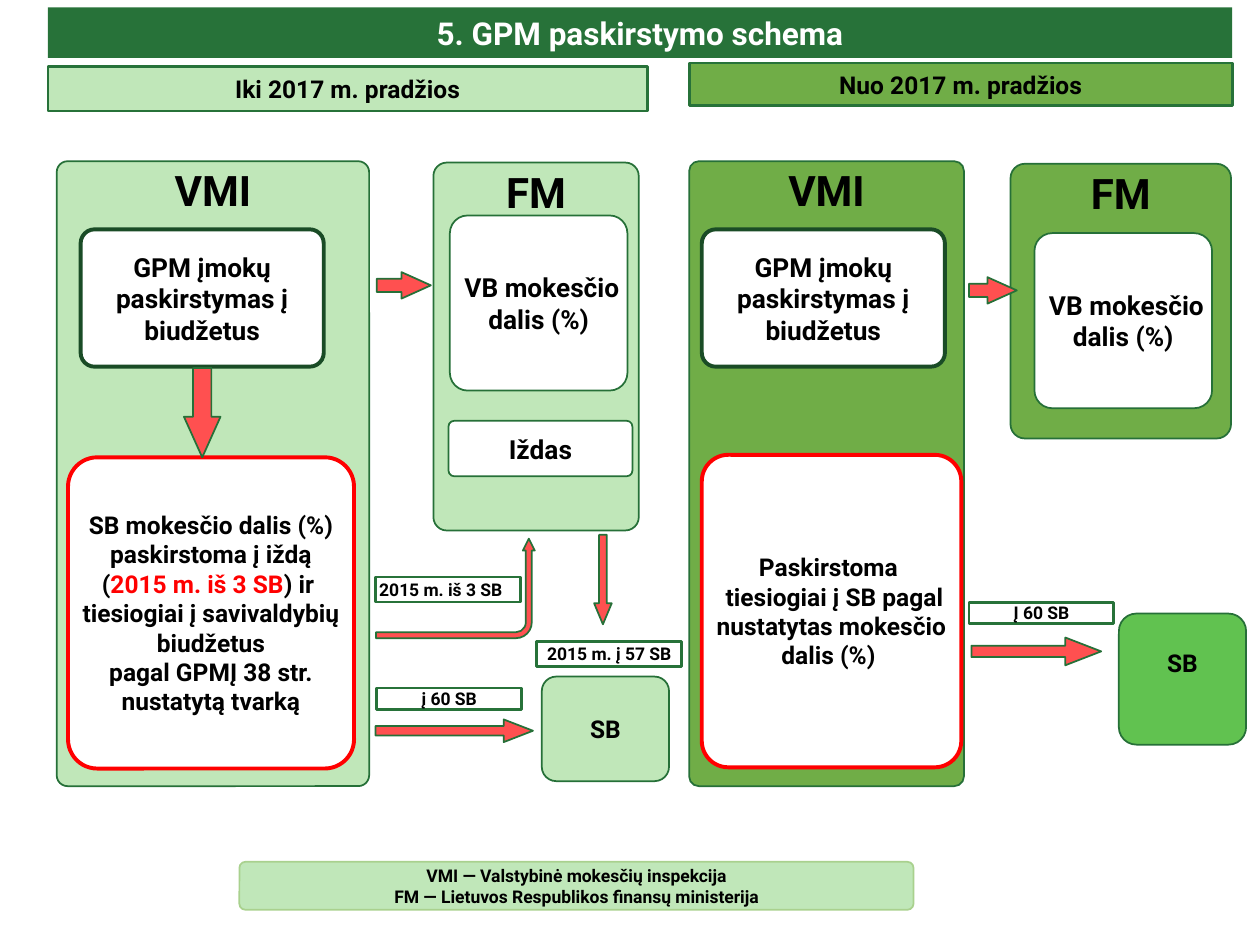
from pptx import Presentation
from pptx.dml.color import RGBColor
from pptx.enum.shapes import MSO_SHAPE as Form
from pptx.enum.text import MSO_ANCHOR as Anchor, PP_ALIGN as Align
from pptx.util import Inches, Pt

FONT = "Roboto"
BLACK = RGBColor(0, 0, 0)
WHITE = RGBColor(255, 255, 255)
RED = RGBColor(0xFF, 0, 0)
CORAL = RGBColor(0xFF, 0x50, 0x50)
MINT = RGBColor(0xC0, 0xE7, 0xB9)
LEAF = RGBColor(0x70, 0xAD, 0x47)
LIME = RGBColor(0x61, 0xC2, 0x50)
SAGE = RGBColor(0xA9, 0xD1, 0x8E)
EDGE = RGBColor(0x26, 0x70, 0x38)
PINE = RGBColor(0x27, 0x72, 0x39)
DARK = RGBColor(0x1A, 0x4C, 0x26)


def draw(slide, form, box, fill, line=EDGE, width=1, adj=()):
    """Draw a flat preset shape in a box given in inches."""
    shape = slide.shapes.add_shape(form, *[Inches(n) for n in box])
    shape.shadow.inherit = False
    shape.fill.solid()
    shape.fill.fore_color.rgb = fill
    if line is None:
        shape.line.fill.background()
    else:
        shape.line.color.rgb = line
        shape.line.width = Pt(width)
    for i, value in enumerate(adj):
        shape.adjustments[i] = value
    return shape


def write(shape, paras, size, color=BLACK, anchor=Anchor.MIDDLE,
          align=Align.CENTER, left=0, top=0):
    """Write paragraphs of (text, colour) runs or plain strings."""
    frame = shape.text_frame
    frame.word_wrap = True
    frame.vertical_anchor = anchor
    frame.margin_left, frame.margin_top = Inches(left), Inches(top)
    frame.margin_right = frame.margin_bottom = 0
    for i, runs in enumerate(paras):
        para = frame.add_paragraph() if i else frame.paragraphs[0]
        para.alignment = align
        for text, tint in [(runs, color)] if isinstance(runs, str) else runs:
            run = para.add_run()
            run.text = text
            font = run.font
            font.name, font.size, font.bold = FONT, Pt(size), True
            font.color.rgb = tint


def shift(x, y, box):
    """Move a relative box to its region's origin."""
    return (x + box[0], y + box[1], *box[2:])


def bar(slide, box, text, fill):
    """Draw a column heading."""
    write(draw(slide, Form.RECTANGLE, box, fill, PINE, 1.5), [text], 14)


def pane(slide, box, text, fill, adj):
    """Draw an institution panel with its name on top."""
    shape = draw(slide, Form.ROUNDED_RECTANGLE, box, fill, adj=[adj])
    write(shape, [text], 24, anchor=Anchor.TOP)


def card(slide, box, paras, size=15, line=EDGE, width=1):
    """Draw a white rounded card with centred text."""
    shape = draw(slide, Form.ROUNDED_RECTANGLE, box, WHITE, line, width, [0.102])
    write(shape, paras, size)


def note(slide, box, text, **style):
    """Draw a small flow label."""
    write(draw(slide, Form.RECTANGLE, box, WHITE, PINE, 1.5), [text], 10, **style)


def arrow(slide, box, adj=(0.5, 1.11), turn=0):
    """Draw a block arrow, turned when asked."""
    draw(slide, Form.RIGHT_ARROW, box, CORAL, adj=adj).rotation = turn


def bend(slide, box):
    """Draw the arrow that runs right and then up."""
    shape = draw(slide, Form.BENT_ARROW, box, CORAL, adj=(0.06, 0.06, 0.12, 0.16))
    shape.rotation = 90
    shape._element.spPr.xfrm.set("flipH", "1")


def town(slide, box, fill, **style):
    """Draw a municipal budget box."""
    shape = draw(slide, Form.ROUNDED_RECTANGLE, box, fill, adj=[0.138])
    write(shape, ["SB"], 14, **style)


def split(slide, x, y):
    """Draw the card on splitting the payments."""
    card(slide, (x, y, 1.93, 1.09), ["GPM įmokų paskirstymas į biudžetus"],
         line=DARK, width=2.25)


def share(slide, x, y):
    """Draw the card on the state budget share."""
    card(slide, (x, y, 1.41, 1.39), [" VB mokesčio dalis (%)"])


def old(slide, x, y):
    """Draw the scheme used before 2017."""
    def at(*box):
        return shift(x, y, box)

    bar(slide, at(0, 0.03, 4.76, 0.35), "Iki 2017 m. pradžios", MINT)
    pane(slide, at(0.07, 0.78, 2.48, 4.96), "VMI", MINT, 0.035)
    pane(slide, at(3.06, 0.79, 1.63, 2.92), "FM", MINT, 0.065)
    town(slide, at(3.92, 4.87, 1.01, 0.83), MINT)
    card(slide, at(3.18, 2.84, 1.46, 0.44), ["Iždas"])
    share(slide, *at(3.19, 1.21))
    split(slide, *at(0.26, 1.32))
    card(slide, at(0.16, 3.13, 2.27, 2.47), [
        [("SB mokesčio dalis (%) paskirstoma į iždą (", BLACK),
         ("2015 m. iš 3 SB", RED), (") ir ", BLACK)],
        "tiesiogiai į savivaldybių biudžetus",
        "pagal GPMĮ 38 str. nustatytą tvarką",
    ], 14, RED, 2.25)
    bend(slide, at(2.84, 3.54, 0.79, 1.26))
    arrow(slide, at(2.61, 1.66, 0.43, 0.21))
    arrow(slide, at(0.87, 2.63, 0.71, 0.29), turn=90)
    arrow(slide, at(4.05, 4.03, 0.71, 0.14), (0.44, 1.19), 90)
    arrow(slide, at(2.6, 5.21, 1.25, 0.18), (0.41, 1.29))
    note(slide, at(2.6, 4.08, 1.15, 0.2), "2015 m. iš 3 SB",
         align=Align.LEFT, left=0.03)
    note(slide, at(3.88, 4.59, 1.15, 0.2), "2015 m. į 57 SB")
    note(slide, at(2.61, 4.96, 1.15, 0.17), "į 60 SB")


def new(slide, x, y):
    """Draw the scheme used since 2017."""
    def at(*box):
        return shift(x, y, box)

    bar(slide, at(0, 0, 4.31, 0.34), "Nuo 2017 m. pradžios", LEAF)
    pane(slide, at(0, 0.78, 2.18, 4.96), "VMI", LEAF, 0.035)
    pane(slide, at(2.55, 0.8, 1.75, 2.18), "FM", LEAF, 0.065)
    town(slide, at(3.41, 4.37, 1.01, 1.04), LIME, anchor=Anchor.TOP, top=0.23)
    share(slide, *at(2.74, 1.35))
    split(slide, *at(0.1, 1.32))
    card(slide, at(0.1, 3.11, 2.06, 2.48), [
        "Paskirstoma ", " tiesiogiai į SB pagal",
        "nustatytas mokesčio dalis (%) ",
    ], 14, RED, 2.25)
    arrow(slide, at(2.22, 1.7, 0.38, 0.21))
    arrow(slide, at(2.24, 4.56, 1.03, 0.22), (0.41, 1.29))
    note(slide, at(2.22, 4.28, 1.15, 0.17), "Į 60 SB")


def head(slide, box):
    """Draw the title band."""
    shape = draw(slide, Form.RECTANGLE, box, PINE, None)
    write(shape, ["5. GPM paskirstymo schema"], 18, WHITE)


def key(slide, box):
    """Draw the list of abbreviations."""
    shape = draw(slide, Form.ROUNDED_RECTANGLE, box, MINT, SAGE, adj=[0.124])
    write(shape, ["VMI — Valstybinė mokesčių inspekcija",
                  "FM — Lietuvos Respublikos finansų ministerija"], 10)


def main():
    """Build and save the slide."""
    deck = Presentation()
    deck.slide_width, deck.slide_height = Inches(10), Inches(7.5)
    slide = deck.slides.add_slide(deck.slide_layouts[6])
    head(slide, (0.38, 0.06, 9.4, 0.4))
    old(slide, 0.38, 0.5)
    new(slide, 5.47, 0.5)
    key(slide, (1.9, 6.84, 5.35, 0.38))
    deck.save("out.pptx")


if __name__ == "__main__":
    main()
